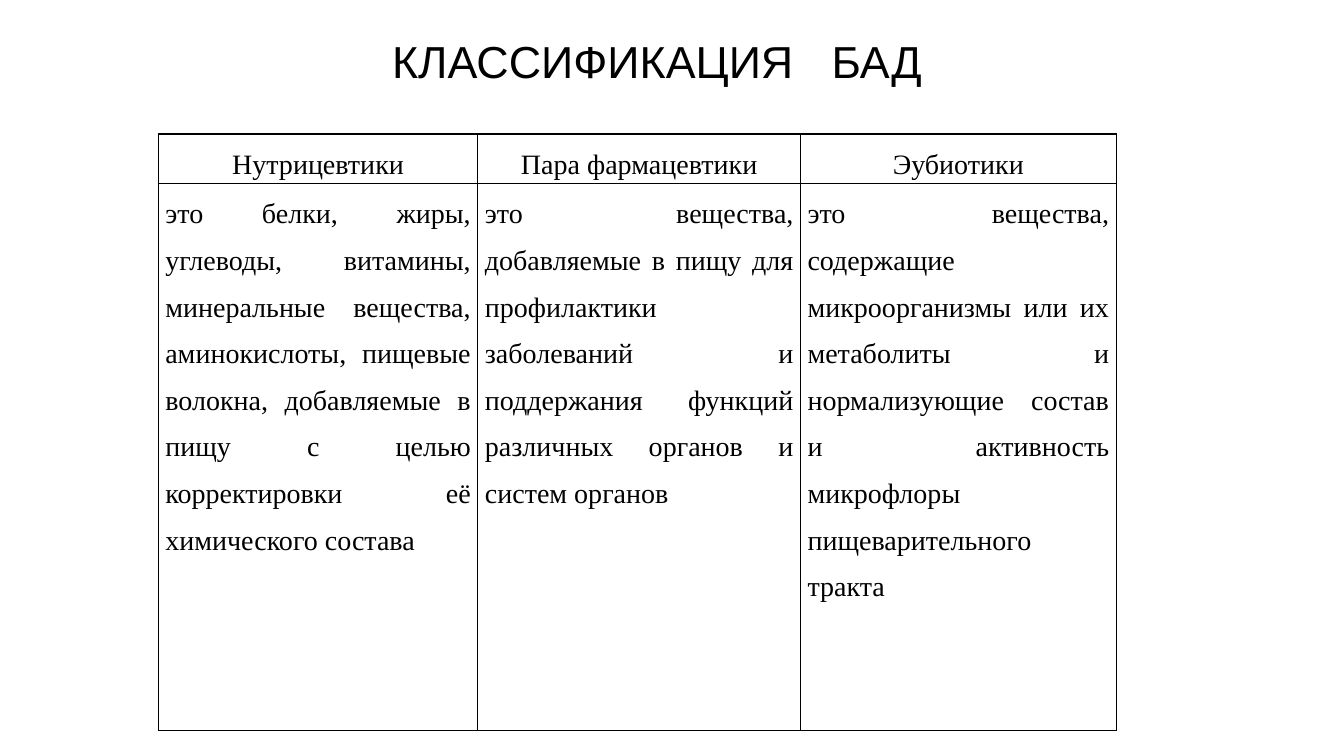
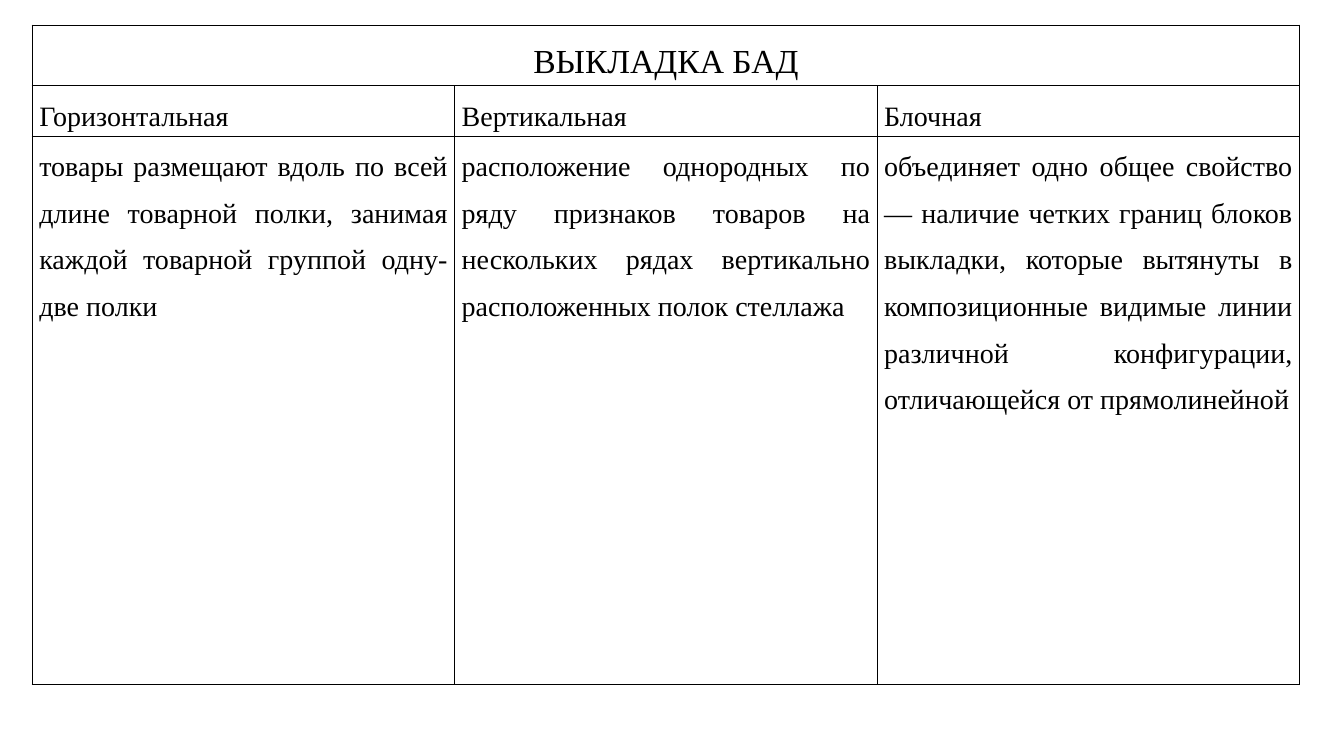
from lxml import etree
from pptx import Presentation
from pptx.dml.color import RGBColor
from pptx.enum import text
from pptx.oxml import ns
from pptx.util import Inches, Pt

BLACK = RGBColor(0, 0, 0)
TITLE_FONT = "Arial"
TABLE_FONT = "Times New Roman"
CENTER, LEFT, JUSTIFY = text.PP_ALIGN.CENTER, text.PP_ALIGN.LEFT, text.PP_ALIGN.JUSTIFY

CLASSES = [
    ["Нутрицевтики", "Пара фармацевтики", "Эубиотики"],
    [
        "это белки, жиры, углеводы, витамины, минеральные вещества, "
        "аминокислоты, пищевые волокна, добавляемые в пищу с целью "
        "корректировки её химического состава",
        "это вещества, добавляемые в пищу для профилактики "
        "заболеваний и поддержания функций различных органов и "
        "систем органов",
        "это вещества, содержащие микроорганизмы или "
        "их метаболиты и нормализующие состав и активность "
        "микрофлоры пищеварительного тракта",
    ],
]
DISPLAYS = [
    ["ВЫКЛАДКА БАД"],
    ["Горизонтальная", "Вертикальная", "Блочная"],
    [
        "товары размещают вдоль по всей длине товарной полки, занимая "
        "каждой товарной группой одну-две полки",
        "расположение однородных по ряду признаков товаров на "
        "нескольких рядах вертикально расположенных полок стеллажа",
        "объединяет одно общее свойство — наличие четких границ блоков "
        "выкладки, которые вытянуты в композиционные видимые линии "
        "различной конфигурации, отличающейся от прямолинейной",
    ],
]


def style_font(font, name, size):
    font.name, font.size = name, Pt(size)
    font.color.rgb = BLACK


def add_borders(cell):
    properties = cell._tc.get_or_add_tcPr()
    for position, side in enumerate(("lnL", "lnR", "lnT", "lnB")):
        line = etree.Element(ns.qn(f"a:{side}"), w=str(Pt(1)))
        fill = etree.SubElement(line, ns.qn("a:solidFill"))
        etree.SubElement(fill, ns.qn("a:srgbClr"), val=str(BLACK))
        properties.insert(position, line)


def fill_cell(cell, wording, alignment, size):
    cell.text_frame.text = wording
    paragraph = cell.text_frame.paragraphs[0]
    paragraph.alignment = alignment
    paragraph.line_spacing = 1.5
    paragraph.space_after = Pt(10)
    for run in paragraph.runs:
        style_font(run.font, TABLE_FONT, size)


def add_grid(slide, left, top, widths, heights, rows, row_styles):
    """Draw a bordered table; a row with one text spans all columns."""
    frame = slide.shapes.add_table(
        len(heights), len(widths), Inches(left), Inches(top),
        Inches(sum(widths)), Inches(sum(heights)))
    table = frame.table
    table.first_row = table.horz_banding = False
    for column, width in zip(table.columns, widths):
        column.width = Inches(width)
    for row, height in zip(table.rows, heights):
        row.height = Inches(height)
    for cell in table.iter_cells():
        cell.margin_left = cell.margin_right = Inches(0.07)
        cell.margin_top = cell.margin_bottom = 0
        cell.fill.background()
        add_borders(cell)
    for index, (wordings, row_style) in enumerate(zip(rows, row_styles)):
        if len(wordings) == 1:
            table.cell(index, 0).merge(table.cell(index, len(widths) - 1))
        for column, wording in enumerate(wordings):
            fill_cell(table.cell(index, column), wording, *row_style)


def add_title(slide, words):
    box = slide.shapes.add_textbox(Inches(3.79), Inches(0.16), Inches(7.63), Inches(0.71))
    frame = box.text_frame
    frame.word_wrap = True
    frame.vertical_anchor = text.MSO_ANCHOR.MIDDLE
    frame.margin_top, frame.margin_bottom = Inches(0.17), 0
    # Character spacing widens the gap between the words
    for part, spacing in ((words[0], 0), (" ", 18), (words[1], 0)):
        run = frame.paragraphs[0].add_run()
        run.text = part
        style_font(run.font, TITLE_FONT, 32)
        if spacing:
            run.font._element.set("spc", str(spacing * 100))


def main():
    presentation = Presentation()
    presentation.slide_width = Inches(13.33)
    presentation.slide_height = Inches(7.5)
    blank = presentation.slide_layouts[6]

    # Classification
    slide = presentation.slides.add_slide(blank)
    add_grid(slide, 1.57, 1.33, [3.17, 3.2, 3.13], [0.49, 5.43], CLASSES,
             [(CENTER, 20), (JUSTIFY, 20)])
    add_title(slide, ("КЛАССИФИКАЦИЯ", "БАД"))

    # Kinds of display
    slide = presentation.slides.add_slide(blank)
    add_grid(slide, 0.32, 0.25, [4.19] * 3, [0.55, 0.49, 5.44], DISPLAYS,
             [(CENTER, 24), (LEFT, 20), (JUSTIFY, 20)])

    presentation.save("out.pptx")


if __name__ == "__main__":
    main()
